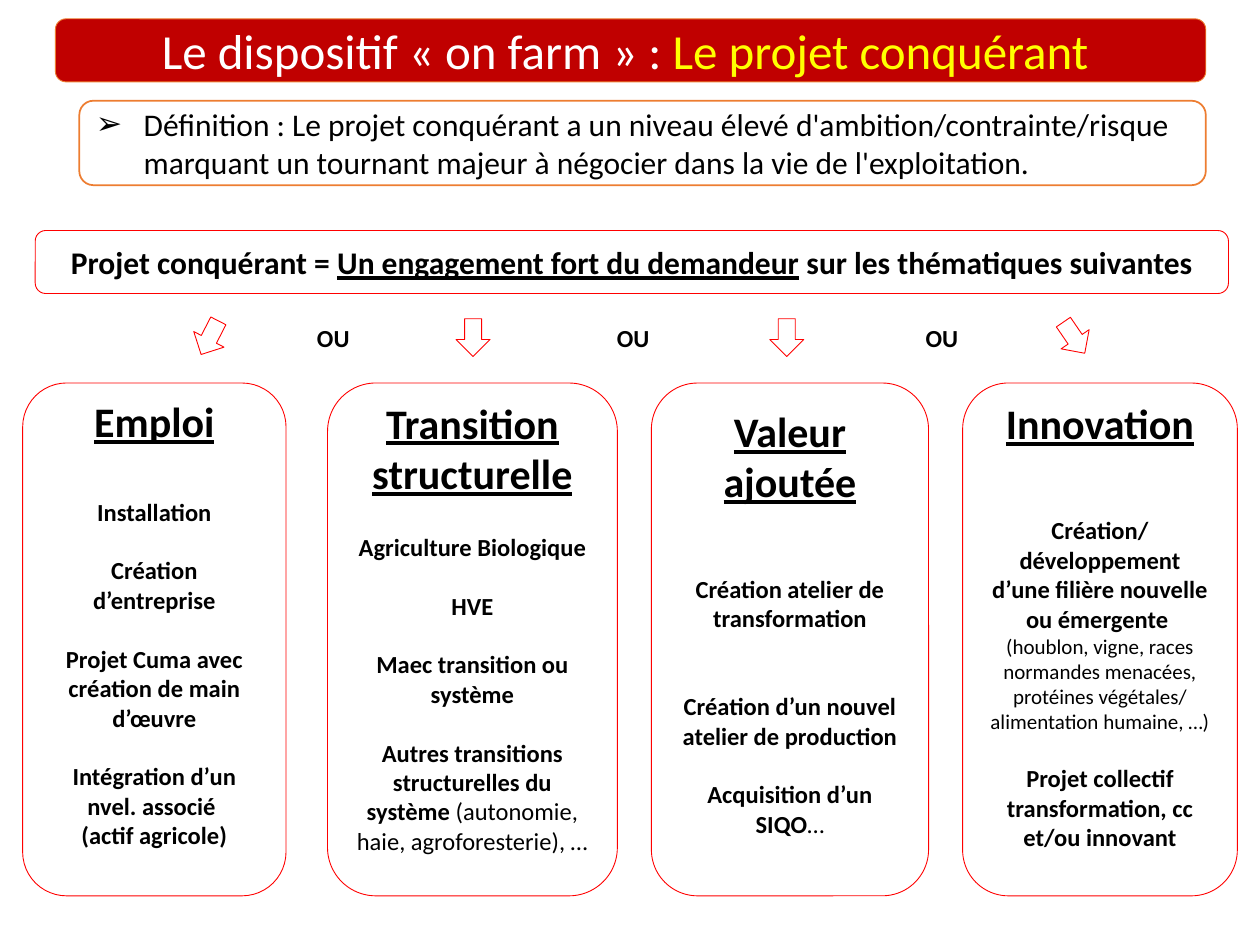
from dataclasses import dataclass
from typing import Optional

from lxml.etree import SubElement
from pptx import Presentation
from pptx.dml.color import RGBColor
from pptx.enum.shapes import MSO_SHAPE
from pptx.enum.text import MSO_ANCHOR, PP_ALIGN
from pptx.oxml.ns import qn
from pptx.util import Inches, Pt

BLACK = RGBColor(0x00, 0x00, 0x00)
WHITE = RGBColor(0xFF, 0xFF, 0xFF)
RED = RGBColor(0xFF, 0x00, 0x00)
DARK_RED = RGBColor(0xC0, 0x00, 0x00)
ORANGE = RGBColor(0xED, 0x7D, 0x31)
YELLOW = RGBColor(0xFF, 0xFF, 0x00)

COLUMNS = 100  # grid of 100 columns by 75 rows
CELL = Inches(10) // COLUMNS
FONT = "Calibri"


@dataclass
class Run:
    text: str
    size: float = 14
    bold: bool = True
    underline: bool = False
    color: RGBColor = BLACK


@dataclass
class Line:
    runs: list[Run]
    gap: float = 0  # points before the paragraph


@dataclass
class Theme:
    left: float
    width: float
    lines: list[Line]


@dataclass
class Arrow:
    left: float
    angle: float = 0


def add_panel(slide, kind: MSO_SHAPE, left: float, top: float, width: float,
              height: float, fill: Optional[RGBColor] = None,
              line: Optional[RGBColor] = None, weight: float = 0.5):
    """Place a preset shape, measured in grid cells."""
    panel = slide.shapes.add_shape(
        kind, *(round(cells * CELL) for cells in (left, top, width, height)))
    panel.shadow.inherit = False
    if fill is None:
        panel.fill.background()
    else:
        panel.fill.solid()
        panel.fill.fore_color.rgb = fill
    if line is None:
        panel.line.fill.background()
    else:
        panel.line.color.rgb = line
        panel.line.width = Pt(weight)
    return panel


def write(panel, lines: list[Line], align: PP_ALIGN = PP_ALIGN.CENTER) -> None:
    frame = panel.text_frame
    frame.word_wrap = True
    frame.vertical_anchor = MSO_ANCHOR.MIDDLE
    for index, line in enumerate(lines):
        paragraph = frame.paragraphs[0] if index == 0 else frame.add_paragraph()
        paragraph.alignment = align
        if line.gap:
            paragraph.space_before = Pt(line.gap)
        for piece in line.runs:
            run = paragraph.add_run()
            run.text = piece.text
            run.font.name = FONT
            run.font.size = Pt(piece.size)
            run.font.bold = piece.bold
            run.font.underline = piece.underline
            run.font.color.rgb = piece.color


def add_bullet(paragraph, char: str, indent: int) -> None:
    properties = paragraph._p.get_or_add_pPr()
    properties.set("marL", str(indent))
    properties.set("indent", str(-indent))
    SubElement(properties, qn("a:buFont")).set("typeface", "Arial")
    SubElement(properties, qn("a:buChar")).set("char", char)


def heading(text: str) -> Line:
    return Line([Run(text, size=24, underline=True)])


def item(text: str, gap: float = 16.8) -> Line:
    return Line([Run(text)], gap)


THEMES = [
    Theme(1.8, 20.9, [
        heading("Emploi"),
        item("Installation", 28.8),
        item("Création d’entreprise"),
        item("Projet Cuma avec création de main d’œuvre"),
        item("Intégration d’un nvel. associé "),
        item("(actif agricole)", 0),
    ]),
    Theme(26, 23, [
        heading("Transition structurelle"),
        item("Agriculture Biologique", 19.3),
        item("HVE"),
        item("Maec transition ou système"),
        Line([Run("Autres transitions structurelles du système"),
              Run(" (autonomie, haie, agroforesterie), …", bold=False)], 16.8),
    ]),
    Theme(51.7, 22, [
        heading("Valeur ajoutée"),
        item("Création atelier de transformation", 38.5),
        item("Création d’un nouvel atelier de production", 33.6),
        Line([Run("Acquisition d’un SIQO"), Run("…", bold=False)], 16.8),
    ]),
    Theme(76.4, 21.8, [
        heading("Innovation"),
        item("Création/ développement d’une filière nouvelle ou émergente ", 38.5),
        Line([Run("(houblon, vigne, races normandes menacées, protéines végétales/ "
                  "alimentation humaine, …) ", size=12, bold=False)]),
        item("Projet collectif transformation, cc et/ou innovant"),
    ]),
]
THEME_INSETS = [0, 0, 0.07, 0.01]  # inches above each heading
ARROWS = [Arrow(15.3, 27.2), Arrow(36.2), Arrow(61.1), Arrow(83.9, 325.6)]
OR_LEFTS = [22.9, 46.7, 71.2]
ARROW_ROW, THEME_ROW = 25.3, 30.4


def main() -> None:
    deck = Presentation()
    deck.slide_width = CELL * COLUMNS
    deck.slide_height = CELL * 75
    slide = deck.slides.add_slide(deck.slide_layouts[6])
    rounded = MSO_SHAPE.ROUNDED_RECTANGLE

    # Title band
    title = add_panel(slide, rounded, 4.4, 1.5, 91.3, 5, DARK_RED, ORANGE)
    write(title, [Line([
        Run("Le dispositif « on farm » : ", 28, False, color=WHITE),
        Run("Le projet conquérant ", 28, False, color=YELLOW)])])

    # Definition
    definition = add_panel(slide, rounded, 6.3, 8, 89.4, 6.7, None, ORANGE, 1)
    write(definition, [Line([Run(
        "Définition : Le projet conquérant a un niveau élevé "
        "d'ambition/contrainte/risque marquant un tournant majeur à négocier "
        "dans la vie de l'exploitation.", 18, False)])], PP_ALIGN.LEFT)
    add_bullet(definition.text_frame.paragraphs[0], "➢", Inches(0.38))

    # Commitment banner
    commitment = add_panel(slide, rounded, 2.8, 18.3, 94.7, 5, WHITE, RED)
    write(commitment, [Line([
        Run("Projet conquérant = ", 18),
        Run("Un engagement fort du demandeur", 18, underline=True),
        Run(" sur les thématiques suivantes", 18)])])

    # Arrows down to the themes
    for arrow in ARROWS:
        pointer = add_panel(slide, MSO_SHAPE.DOWN_ARROW, arrow.left, ARROW_ROW,
                            2.7, 3, WHITE, RED)
        pointer.rotation = arrow.angle

    # Theme columns
    for theme, inset in zip(THEMES, THEME_INSETS):
        column = add_panel(slide, rounded, theme.left, THEME_ROW, theme.width,
                           40.7, WHITE, RED)
        write(column, theme.lines)
        column.text_frame.vertical_anchor = MSO_ANCHOR.TOP
        column.text_frame.margin_top = Inches(inset)
        column.text_frame.margin_bottom = 0

    # Alternatives between the themes
    for left in OR_LEFTS:
        write(add_panel(slide, rounded, left, ARROW_ROW, 7.1, 3), [item("OU", 0)])

    deck.save("out.pptx")


if __name__ == "__main__":
    main()
